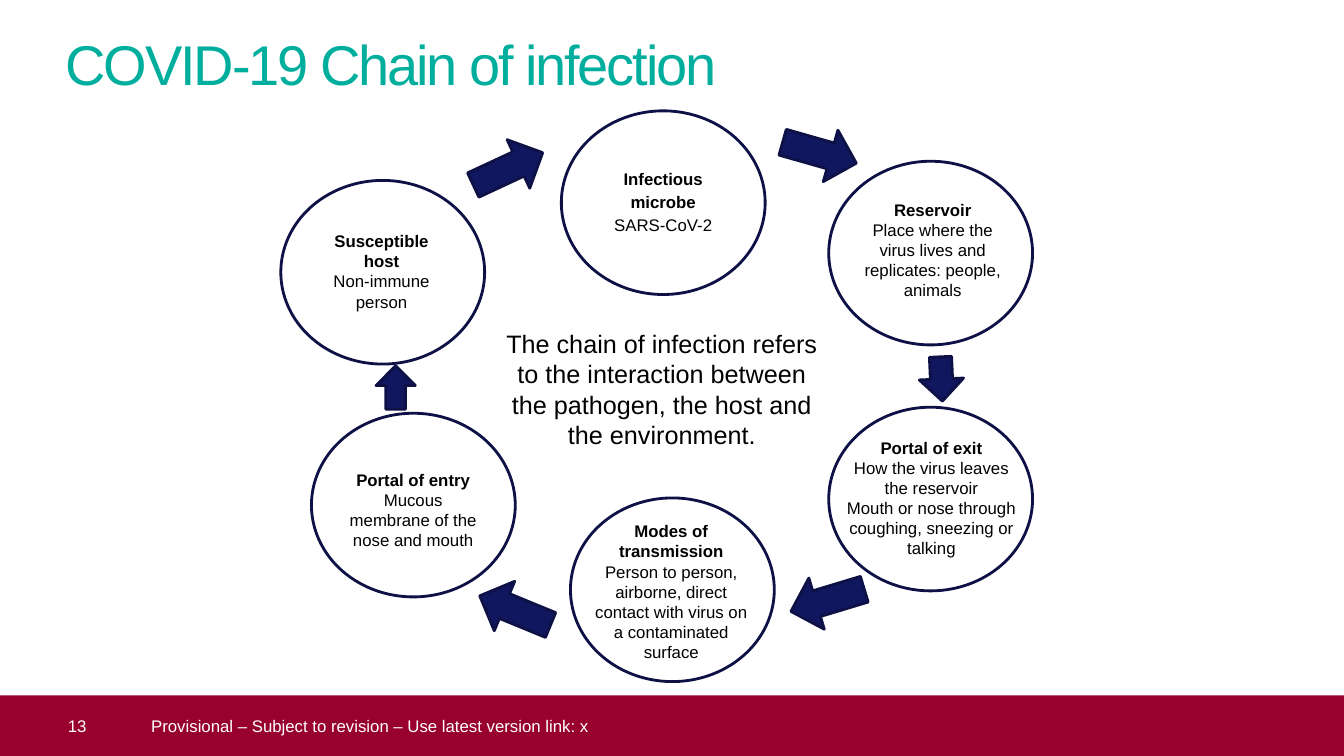
from lxml.etree import SubElement
from pptx import Presentation
from pptx.dml.color import RGBColor
from pptx.enum.shapes import MSO_SHAPE as SHAPE
from pptx.enum.text import MSO_ANCHOR as ANCHOR, MSO_AUTO_SIZE as AUTO, PP_ALIGN as ALIGN
from pptx.oxml.ns import qn
from pptx.util import Pt

COLORS = {"teal": "00AE9E", "crimson": "98002E", "navy": "11175E",
          "outline": "0D1146", "black": "000000", "white": "FFFFFF"}


def write(sp, lines, size=12, color="black", align=ALIGN.CENTER, heading=False):
    tf = sp.text_frame
    tf.word_wrap = True
    tf.text = "\n".join(lines)
    for i, p in enumerate(tf.paragraphs):
        p.alignment = align
        for r in p.runs:
            r.font.name = "Arial"
            r.font.size = Pt(size)
            r.font.bold = heading and i == 0
            r.font.color.rgb = RGBColor.from_string(COLORS[color])
    return tf


def add_shape(kind, box, fill=None, line=None):
    sp = s.shapes.add_shape(kind, *map(Pt, box))
    sp.shadow.inherit = False
    if fill:
        sp.fill.solid()
        sp.fill.fore_color.rgb = RGBColor.from_string(COLORS[fill])
    else:
        sp.fill.background()
    if line:
        sp.line.color.rgb = RGBColor.from_string(COLORS[line])
        sp.line.width = Pt(2)
    else:
        sp.line.fill.background()
    return sp


prs = Presentation()
prs.slide_width, prs.slide_height = Pt(960), Pt(540)
s = prs.slides.add_slide(prs.slide_layouts[1])
title, microbe = s.placeholders

title.left, title.top, title.width, title.height = map(Pt, (46.8, 18, 632, 51))
tf = write(title, ["COVID-19 Chain of infection"], 40, "teal", ALIGN.LEFT)
tf.auto_size = AUTO.NONE
tf.vertical_anchor = ANCHOR.MIDDLE
tf.margin_left = tf.margin_right = tf.margin_bottom = 0
tf.margin_top = Pt(3)
tf.paragraphs[0].runs[0].font._element.set("spc", "-150")

microbe.left, microbe.top, microbe.width, microbe.height = map(Pt, (438.5, 118.8, 70.5, 48.2))
tf = write(microbe, ["Infectious microbe", "SARS-CoV-2"], heading=True)
tf.auto_size = AUTO.NONE
tf.margin_left = tf.margin_right = tf.margin_top = tf.margin_bottom = 0
for p in tf.paragraphs:
    p.line_spacing = 1.14
    p.space_before = Pt(0)
    pPr = p._p.get_or_add_pPr()
    pPr.set("marL", "0")
    pPr.set("indent", "0")
    SubElement(pPr, qn("a:buNone"))

footer = add_shape(SHAPE.RECTANGLE, (0, 496.8, 960, 43.2), "crimson")
notice = s.shapes.add_textbox(Pt(94.3), Pt(496.8), Pt(846.7), Pt(43.2))
for sp, text, indent in [
    (footer, "13", 48.5),
    (notice, "Provisional – Subject to revision – Use latest version link: x", 13.7),
]:
    tf = write(sp, [text], color="white", align=ALIGN.LEFT)
    tf.vertical_anchor = ANCHOR.MIDDLE
    tf.margin_left = Pt(indent)
    tf.margin_right = tf.margin_top = tf.margin_bottom = 0

for left, top in [(401, 79.2), (592, 115.2), (592, 290.9),
                  (407.5, 355.7), (222.5, 295.2), (200.6, 128.9)]:
    add_shape(SHAPE.OVAL, (left, top, 145.6, 131.2), line="outline")

links = [
    ((609.8, 139, 113, 80), ["Reservoir", "Place where the virus lives and replicates: people, animals"]),
    ((596.2, 308.9, 138.2, 94.3), ["Portal of exit", "How the virus leaves the reservoir",
                                   "Mouth or nose through coughing, sneezing or talking"]),
    ((416.9, 368.6, 125.3, 108.7), ["Modes of transmission",
                                    "Person to person, airborne, direct contact with virus on a contaminated surface"]),
    ((241.2, 331.9, 108, 65.5), ["Portal of entry", "Mucous membrane of the nose and mouth"]),
    ((229.7, 161.3, 85.7, 65.5), ["Susceptible host", "Non-immune person"]),
]
for box, lines in links:
    write(s.shapes.add_textbox(*map(Pt, box)), lines, heading=True)

summary = s.shapes.add_textbox(Pt(348.5), Pt(231.1), Pt(248.4), Pt(94.3))
write(summary, ["The chain of infection refers to the interaction between "
                "the pathogen, the host and the environment."], 18)

for box, angle in [
    ((558, 90, 54.7, 38.2), 15.9),
    ((656.6, 254.9, 31.7, 31.7), 87.5),
    ((563.8, 409.7, 54.7, 38.2), 163.2),
    ((340.6, 416.9, 54.7, 38.2), 202.4),
    ((267.1, 262.8, 31, 28.1), 270),
    ((335.5, 101.5, 54.7, 38.2), 335),
]:
    add_shape(SHAPE.RIGHT_ARROW, box, "navy", "outline").rotation = angle

prs.save("out.pptx")
